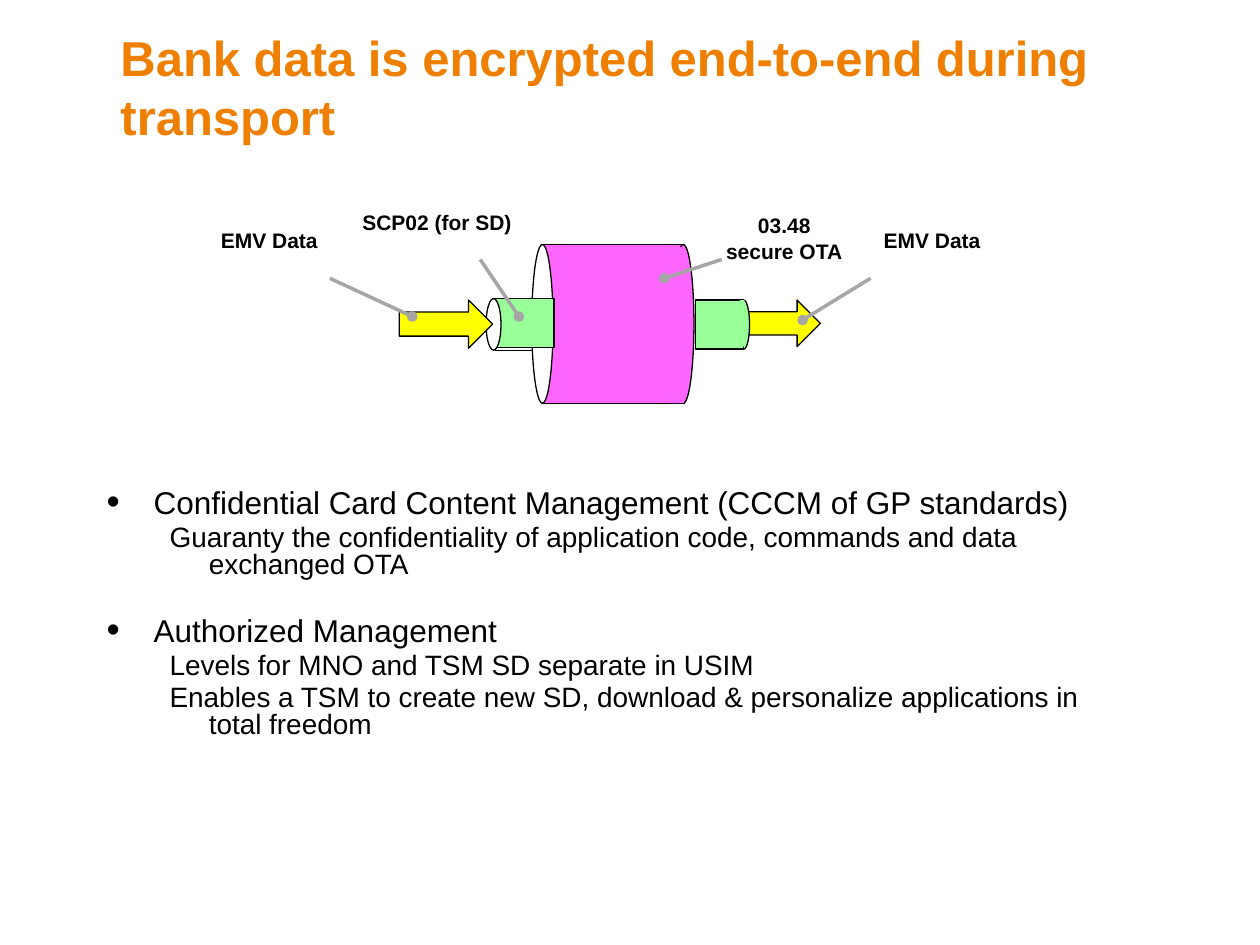
"""Build a slide on end-to-end encryption of bank data."""
import lxml.etree
import pptx
import pptx.dml.color
import pptx.enum.shapes
import pptx.enum.text
import pptx.oxml.ns
import pptx.util

Cm = pptx.util.Cm
Pt = pptx.util.Pt
qn = pptx.oxml.ns.qn
tint = pptx.dml.color.RGBColor.from_string
kinds = pptx.enum.shapes.MSO_SHAPE
BLACK, WHITE, GREY = "000000", "FFFFFF", "A6A6A6"
PINK, GREEN, GOLD = "FF66FF", "99FF99", "FFFF00"


def draw(start, end, color, width):
    """Add a straight line without shadow."""
    link = slide.shapes.add_connector(
        pptx.enum.shapes.MSO_CONNECTOR.STRAIGHT,
        Cm(start[0]), Cm(start[1]), Cm(end[0]), Cm(end[1]))
    link.line.color.rgb = tint(color)
    link.line.width = Pt(width)
    lxml.etree.SubElement(link._element.spPr, qn("a:effectLst"))
    return link


def write(para, text, size, color=BLACK, bold=False):
    """Add one run of text."""
    run = para.add_run()
    run.text = text
    run.font.name = "Arial"
    run.font.size = Pt(size)
    run.font.bold = bold
    run.font.color.rgb = tint(color)


deck = pptx.Presentation()
deck.slide_width, deck.slide_height = Cm(25.4), Cm(19.05)
slide = deck.slides.add_slide(deck.slide_layouts[6])

title = slide.shapes.add_textbox(Cm(2.18), Cm(0.3), Cm(22.12), Cm(3.18)).text_frame
title.word_wrap = True
title.margin_top = Cm(0.25)
write(title.paragraphs[0], "Bank data is encrypted end-to-end during transport",
      28, "EE7F00", True)

body = slide.shapes.add_textbox(Cm(1.9), Cm(9.75), Cm(20.73), Cm(5.72)).text_frame
body.word_wrap = True
points = [
    (0, 0, "Confidential Card Content Management (CCCM of GP standards)"),
    (1, 3.2, "Guaranty the confidentiality of application code, commands "
             "and data exchanged OTA"),
    (0, 22, "Authorized Management"),
    (1, 3.2, "Levels for MNO and TSM SD separate in USIM"),
    (1, 3.2, "Enables a TSM to create new SD, download & personalize "
             "applications in total freedom"),
]
for rank, (level, gap, text) in enumerate(points):
    para = body.add_paragraph() if rank else body.paragraphs[0]
    para.level = level
    props = para._p.get_or_add_pPr()
    left, hang = ((0.95, 0.95), (2.06, 0.79))[level]
    props.set("marL", str(Cm(left)))
    props.set("indent", str(-Cm(hang)))
    if level:
        lxml.etree.SubElement(props, qn("a:buNone"))
    else:
        lxml.etree.SubElement(props, qn("a:buSzPct"), val="120000")
        lxml.etree.SubElement(props, qn("a:buFont"), typeface="Arial")
        lxml.etree.SubElement(props, qn("a:buChar"), char="•")
    para.line_spacing = 0.8
    para.space_before = Pt(gap)
    write(para, text, 16 if level else 18)

for y in (6.02, 7.06):
    draw((9.98, y), (11.43, y), BLACK, 0.75)

parts = [
    (kinds.RIGHT_ARROW, 14.66, 6.05, 1.88, 0.94, GOLD, True),
    (kinds.RECTANGLE, 10.95, 4.93, 2.84, 3.2, PINK, True),
    (kinds.OVAL, 10.72, 4.93, 0.43, 3.2, WHITE, True),
    (kinds.OVAL, 13.56, 4.93, 0.43, 3.2, PINK, True),
    (kinds.RECTANGLE, 13.51, 4.98, 0.28, 3.15, PINK, False),
    (kinds.RECTANGLE, 9.93, 6.02, 1.24, 0.99, GREEN, True),
    (kinds.OVAL, 9.8, 6.02, 0.3, 1.04, WHITE, True),
    (kinds.OVAL, 14.88, 6.05, 0.23, 0.99, GREEN, True),
    (kinds.RECTANGLE, 14.02, 6.05, 0.97, 0.99, GREEN, True),
    (kinds.RECTANGLE, 14.91, 6.05, 0.1, 0.94, GREEN, False),
    (kinds.RIGHT_ARROW, 8.05, 6.05, 1.88, 0.97, GOLD, True),
]
for kind, x, y, wide, high, color, edge in parts:
    part = slide.shapes.add_shape(kind, Cm(x), Cm(y), Cm(wide), Cm(high))
    part.shadow.inherit = False
    part.fill.solid()
    part.fill.fore_color.rgb = tint(color)
    if edge:
        part.line.color.rgb = tint(BLACK)
        part.line.width = Pt(0.75)
    else:
        part.line.fill.background()

labels = [
    ("SCP02 (for SD)", 6.78, 4.09, 4.06, 0.76, (9.68, 5.23), (10.46, 6.38)),
    ("03.48 secure OTA", 14.3, 4.17, 3.02, 1.27, (14.55, 5.23), (13.39, 5.61)),
    ("EMV Data", 3.4, 4.47, 4.06, 0.76, (6.65, 5.61), (8.31, 6.38)),
    ("EMV Data", 16.76, 4.47, 4.06, 0.76, (17.55, 5.61), (16.18, 6.45)),
]
for text, x, y, wide, high, start, end in labels:
    frame = slide.shapes.add_textbox(Cm(x), Cm(y), Cm(wide), Cm(high)).text_frame
    frame.word_wrap = True
    frame.auto_size = pptx.enum.text.MSO_AUTO_SIZE.SHAPE_TO_FIT_TEXT
    para = frame.paragraphs[0]
    para.alignment = pptx.enum.text.PP_ALIGN.CENTER
    write(para, text, 12, bold=True)
    link = draw(start, end, GREY, 2)
    lxml.etree.SubElement(link.line._get_or_add_ln(), qn("a:tailEnd"), type="oval")

deck.save("out.pptx")
